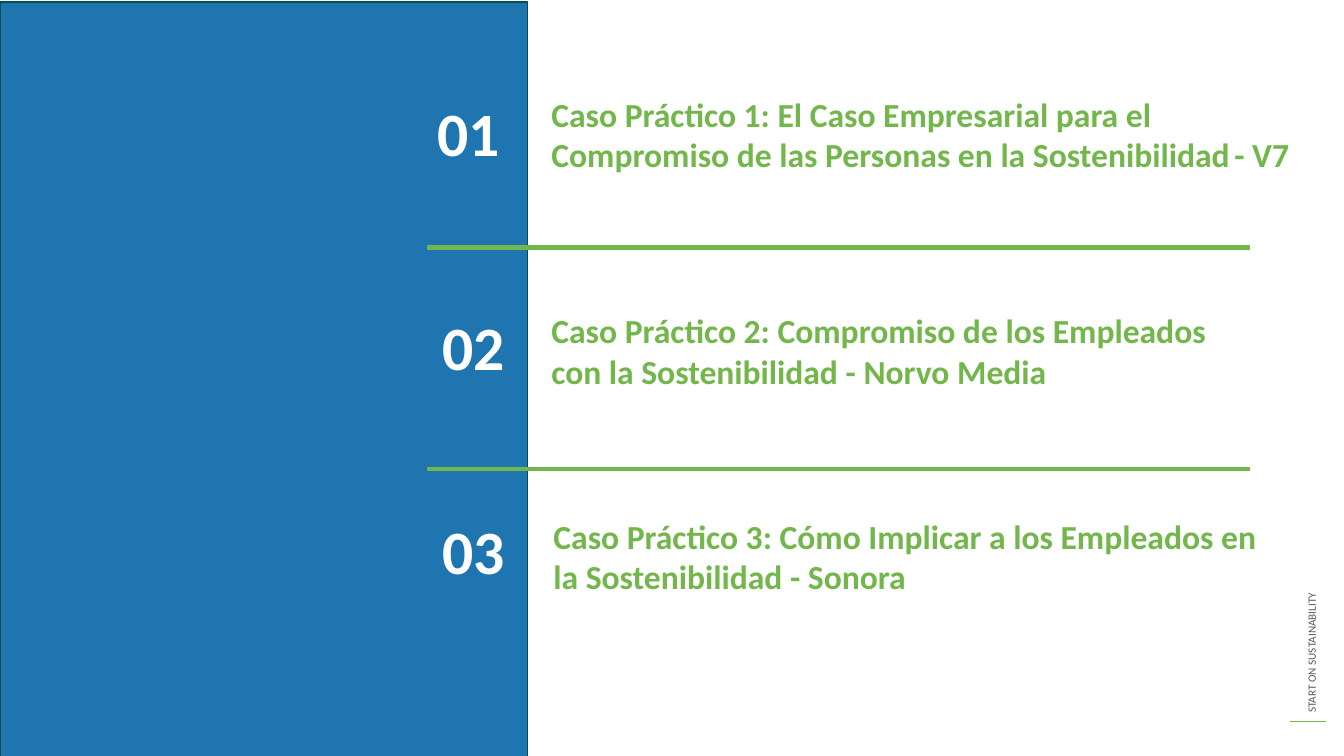
from dataclasses import dataclass

from lxml.etree import SubElement
from pptx import Presentation
from pptx.dml.color import RGBColor
from pptx.enum.shapes import MSO_CONNECTOR as Conn, MSO_SHAPE as Shape
from pptx.enum.text import MSO_ANCHOR as Anchor, PP_ALIGN as Align
from pptx.oxml.ns import qn
from pptx.util import Inches, Pt

# Slide and a grid of 100 columns by 100 rows
prs = Presentation()
prs.slide_width, prs.slide_height = Inches(13.33), Inches(7.5)
COL, ROW = prs.slide_width / 100, prs.slide_height / 100
s = prs.slides.add_slide(prs.slide_layouts[6])

BLUE, TEAL, GREEN = "1E75B0", "054F50", "73B64B"
WHITE, GREY, BLACK = "FFFFFF", "595959", "000000"

TITLE = {"name": "Calibri", "size": Pt(24), "bold": True, "color": GREEN}
NUMBER = {"name": "Calibri", "size": Pt(44), "bold": True, "color": WHITE}
GAP = {"name": "Arial", "size": Pt(11), "bold": True, "color": BLACK}
FOOTER = {"name": "Calibri", "size": Pt(8), "bold": False, "color": GREY}


@dataclass
class Box:
    """Left and width in columns, top and height in rows."""
    x: float
    y: float
    w: float
    h: float

    def emu(self) -> list[int]:
        return [round(v) for v in (self.x * COL, self.y * ROW, self.w * COL, self.h * ROW)]


@dataclass
class Case:
    number: str
    number_box: Box
    title_box: Box
    runs: list[tuple[str, dict]]


def rgb(value: str) -> RGBColor:
    return RGBColor.from_string(value)


def add_bar(box: Box, fill: str, line: str):
    sp = s.shapes.add_shape(Shape.RECTANGLE, *box.emu())
    sp.shadow.inherit = False
    sp.fill.solid()
    sp.fill.fore_color.rgb = rgb(fill)
    sp.line.color.rgb = rgb(line)
    sp.line.width = Pt(1)
    return sp


def add_text(box: Box, runs: list[tuple[str, dict]], spacing: float = 1.0):
    sp = s.shapes.add_textbox(*box.emu())
    tf = sp.text_frame
    tf.word_wrap = True
    tf.vertical_anchor = Anchor.TOP
    p = tf.paragraphs[0]
    p.alignment = Align.LEFT
    p.line_spacing = spacing
    for text, style in runs:
        r = p.add_run()
        r.text = text
        for key, value in style.items():
            if key == "color":
                r.font.color.rgb = rgb(value)
            else:
                setattr(r.font, key, value)
    return sp


def add_line(x1: float, x2: float, y: float, color: str):
    ln = s.shapes.add_connector(Conn.STRAIGHT, round(x1 * COL), round(y * ROW),
                                round(x2 * COL), round(y * ROW))
    ln.line.color.rgb = rgb(color)
    ln.line.width = Pt(1)
    SubElement(ln._element.spPr, qn("a:effectLst"))
    return ln


CASES = [
    Case("01", Box(31.81, 8.93, 10.13, 14), Box(40.29, 11.73, 56.86, 16.53),
         [("Caso Práctico 1: El Caso Empresarial para el Compromiso "
           "de las Personas en la Sostenibilidad", TITLE), (" ", GAP), ("- V7", TITLE)]),
    Case("02", Box(32.18, 37.33, 10.13, 14), Box(40.29, 40.4, 53.86, 7.6),
         [("Caso Práctico 2: Compromiso de los Empleados "
           "con la Sostenibilidad - Norvo Media", TITLE)]),
    Case("03", Box(32.18, 64.27, 10.13, 14), Box(40.44, 67.6, 53.86, 4.93),
         [("Caso Práctico 3: Cómo Implicar a los Empleados en "
           "la Sostenibilidad - Sonora", TITLE)]),
]

# Vertical footer with its short rule
footer = add_text(Box(80.87, 64.27, 33.46, 3.2), [("START ON SUSTAINABILITY", FOOTER)])
footer.rotation = 270
add_line(96.02, 98.65, 95.47, GREEN)

# Side panel
add_bar(Box(0, 0.27, 39.23, 100), BLUE, TEAL)

# Numbered cases
for case in CASES:
    add_text(case.title_box, case.runs)
    add_text(case.number_box, [(case.number, NUMBER)], spacing=1.3)

# Dividers between cases
for y in (32.53, 61.87):
    add_bar(Box(31.81, y, 61.14, 0.4), GREEN, GREEN)

prs.save("out.pptx")
